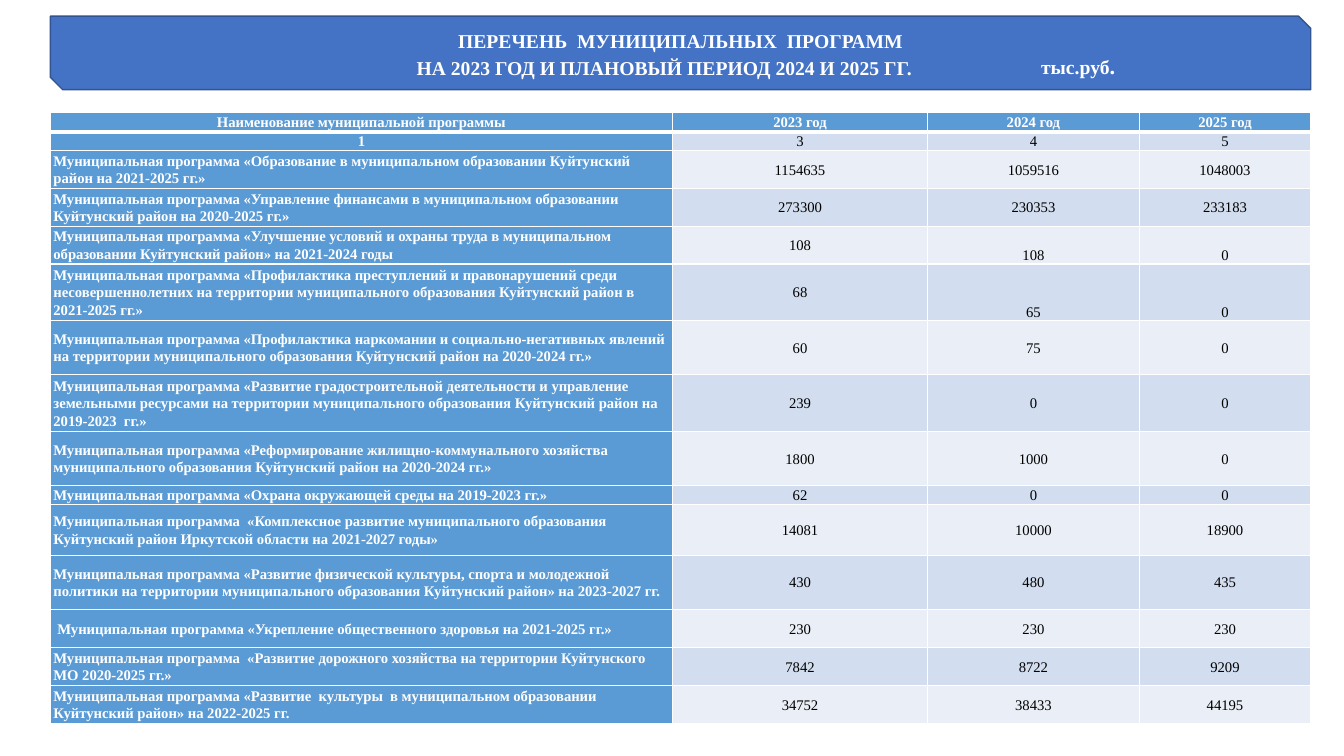
from lxml import etree
from pptx import Presentation
from pptx.dml.color import RGBColor
from pptx.enum.shapes import MSO_SHAPE as Shape
from pptx.enum.text import MSO_ANCHOR as Anchor, PP_ALIGN as Align
from pptx.oxml.ns import qn
from pptx.util import Inches, Pt

FONT = "Times New Roman"
WHITE, BLACK = "FFFFFF", "000000"
BANNER_FILL, BANNER_LINE = "4472C4", "325491"
HEAD_FILL, BAND_FILLS = "5B9BD5", ("EAEFF7", "D2DEEF")
MARGIN, CONTENT_WIDTH = 0.5, 12.5
COLUMN_WIDTHS = (6.17, 2.53, 2.1, 1.7)
ONE_LINE, TWO_LINES, THREE_LINES = 0.18, 0.36, 0.54

HEADINGS = ("Наименование муниципальной программы", "2023 год", "2024 год", "2025 год")
COLUMN_NUMBERS = ("1", "3", "4", "5")
# Row height, programme name, amounts for 2023, 2024 and 2025
PROGRAMMES = [
    (TWO_LINES, "Муниципальная программа «Образование в муниципальном образовании "
     "Куйтунский район на 2021-2025 гг.»", 1154635, 1059516, 1048003),
    (TWO_LINES, "Муниципальная программа «Управление финансами в муниципальном образовании "
     "Куйтунский район на 2020-2025 гг.»", 273300, 230353, 233183),
    (TWO_LINES, "Муниципальная программа «Улучшение условий и охраны труда в муниципальном "
     "образовании Куйтунский район» на 2021-2024 годы", 108, 108, 0),
    (THREE_LINES, "Муниципальная программа «Профилактика преступлений и правонарушений среди "
     "несовершеннолетних на территории муниципального образования Куйтунский район в "
     "2021-2025 гг.»", 68, 65, 0),
    (THREE_LINES, "Муниципальная программа «Профилактика наркомании и социально-негативных "
     "явлений на территории муниципального образования Куйтунский район на 2020-2024 гг.»",
     60, 75, 0),
    (THREE_LINES, "Муниципальная программа «Развитие градостроительной деятельности и управление "
     "земельными ресурсами на территории муниципального образования Куйтунский район на "
     "2019-2023  гг.»", 239, 0, 0),
    (THREE_LINES, "Муниципальная программа «Реформирование жилищно-коммунального хозяйства "
     "муниципального образования Куйтунский район на 2020-2024 гг.»", 1800, 1000, 0),
    (ONE_LINE, "Муниципальная программа «Охрана окружающей среды на 2019-2023 гг.»", 62, 0, 0),
    (0.5, "Муниципальная программа  «Комплексное развитие муниципального образования "
     "Куйтунский район Иркутской области на 2021-2027 годы»", 14081, 10000, 18900),
    (THREE_LINES, "Муниципальная программа «Развитие физической культуры, спорта и молодежной "
     "политики на территории муниципального образования Куйтунский район» на 2023-2027 гг.",
     430, 480, 435),
    (0.38, "Муниципальная программа «Укрепление общественного здоровья на 2021-2025 гг.»",
     230, 230, 230),
    (TWO_LINES, "Муниципальная программа  «Развитие дорожного хозяйства на территории "
     "Куйтунского МО 2020-2025 гг.»", 7842, 8722, 9209),
    (TWO_LINES, "Муниципальная программа «Развитие  культуры  в муниципальном образовании "
     "Куйтунский район» на 2022-2025 гг.", 34752, 38433, 44195),
]
LOW_ROWS = (4, 5)      # the 2024 and 2025 amounts stand at the bottom
INDENTED_ROW = 12


def color(hex_string):
    return RGBColor.from_string(hex_string)


def write(paragraph, text, size=10.5, ink=WHITE, bold=True, align=Align.CENTER, spacing=1.07):
    paragraph.alignment = align
    paragraph.line_spacing = spacing
    paragraph.space_before = paragraph.space_after = Pt(0)
    run = paragraph.add_run()
    run.text = text
    run.font.name = FONT
    run.font.size = Pt(size)
    run.font.bold = bold
    run.font.color.rgb = color(ink)


def set_frame(frame, anchor=Anchor.MIDDLE):
    frame.word_wrap = True
    frame.vertical_anchor = anchor
    frame.margin_left = frame.margin_right = frame.margin_top = frame.margin_bottom = 0


def add_banner(slide, left, top, width, height):
    box = [Inches(length) for length in (left, top, width, height)]
    banner = slide.shapes.add_shape(Shape.SNIP_2_DIAG_RECTANGLE, *box)
    banner.shadow.inherit = False
    banner.fill.solid()
    banner.fill.fore_color.rgb = color(BANNER_FILL)
    banner.line.color.rgb = color(BANNER_LINE)
    banner.line.width = Pt(1)

    title = slide.shapes.title
    title.left, title.top, title.width, title.height = box
    slide.shapes._spTree.append(title._element)  # bring in front of the banner
    set_frame(title.text_frame)
    write(title.text_frame.paragraphs[0], "ПЕРЕЧЕНЬ  МУНИЦИПАЛЬНЫХ  ПРОГРАММ", 14, spacing=Pt(19))
    period = title.text_frame.add_paragraph()
    write(period, "НА 2023 ГОД И ПЛАНОВЫЙ ПЕРИОД 2024 И 2025 ГГ.", 14, spacing=Pt(19))
    period._p.get_or_add_pPr().set("marR", str(Inches(0.32)))

    unit = slide.shapes.add_textbox(Inches(left + 0.786 * width), Inches(top + height / 2),
                                    Inches(1), Inches(0.26))
    set_frame(unit.text_frame)
    paragraph = unit.text_frame.paragraphs[0]
    write(paragraph, "тыс.руб", 14, align=Align.LEFT, spacing=1.0)
    write(paragraph, ".", 16, align=Align.LEFT, spacing=1.0)


def set_borders(cell, top=1, bottom=1):
    properties = cell._tc.get_or_add_tcPr()
    for side, width in (("L", 1), ("R", 1), ("T", top), ("B", bottom)):
        line = etree.SubElement(properties, qn(f"a:ln{side}"), w=str(Pt(width)))
        fill = etree.SubElement(line, qn("a:solidFill"))
        etree.SubElement(fill, qn("a:srgbClr"), val=WHITE)


def fill_cell(cell, text, row, column):
    is_head = row == 0 or column == 0
    is_name = row > 1 and column == 0
    is_low = row in LOW_ROWS and column > 1
    set_borders(cell, top=3 if row == 1 else 1, bottom=3 if row == 0 else 1)
    cell.fill.solid()
    cell.fill.fore_color.rgb = color(HEAD_FILL if is_head else BAND_FILLS[row % 2])
    cell.margin_left = Inches(0.07 if is_name and row == INDENTED_ROW else 0.03)
    cell.margin_right = Inches(0.03)
    cell.margin_top = cell.margin_bottom = 0
    cell.vertical_anchor = Anchor.BOTTOM if is_low else Anchor.MIDDLE
    write(cell.text_frame.paragraphs[0], text, ink=WHITE if is_head else BLACK,
          bold=is_head, align=Align.LEFT if is_name else Align.CENTER)


def add_programme_table(slide, left, top, width):
    rows = [(ONE_LINE, *HEADINGS), (ONE_LINE, *COLUMN_NUMBERS), *PROGRAMMES]
    height = sum(row[0] for row in rows)
    table = slide.shapes.add_table(len(rows), len(COLUMN_WIDTHS), Inches(left), Inches(top),
                                   Inches(width), Inches(height)).table
    for column, share in zip(table.columns, COLUMN_WIDTHS):
        column.width = Inches(width * share / sum(COLUMN_WIDTHS))
    for row, (row_height, *texts) in enumerate(rows):
        table.rows[row].height = Inches(row_height)
        for column, text in enumerate(texts):
            fill_cell(table.cell(row, column), str(text), row, column)


def main():
    presentation = Presentation()
    presentation.slide_width, presentation.slide_height = Inches(13.33), Inches(7.5)
    slide = presentation.slides.add_slide(presentation.slide_layouts[5])
    add_banner(slide, MARGIN, 0.16, CONTENT_WIDTH, 0.73)
    add_programme_table(slide, MARGIN, 1.12, CONTENT_WIDTH)
    presentation.save("out.pptx")


if __name__ == "__main__":
    main()
